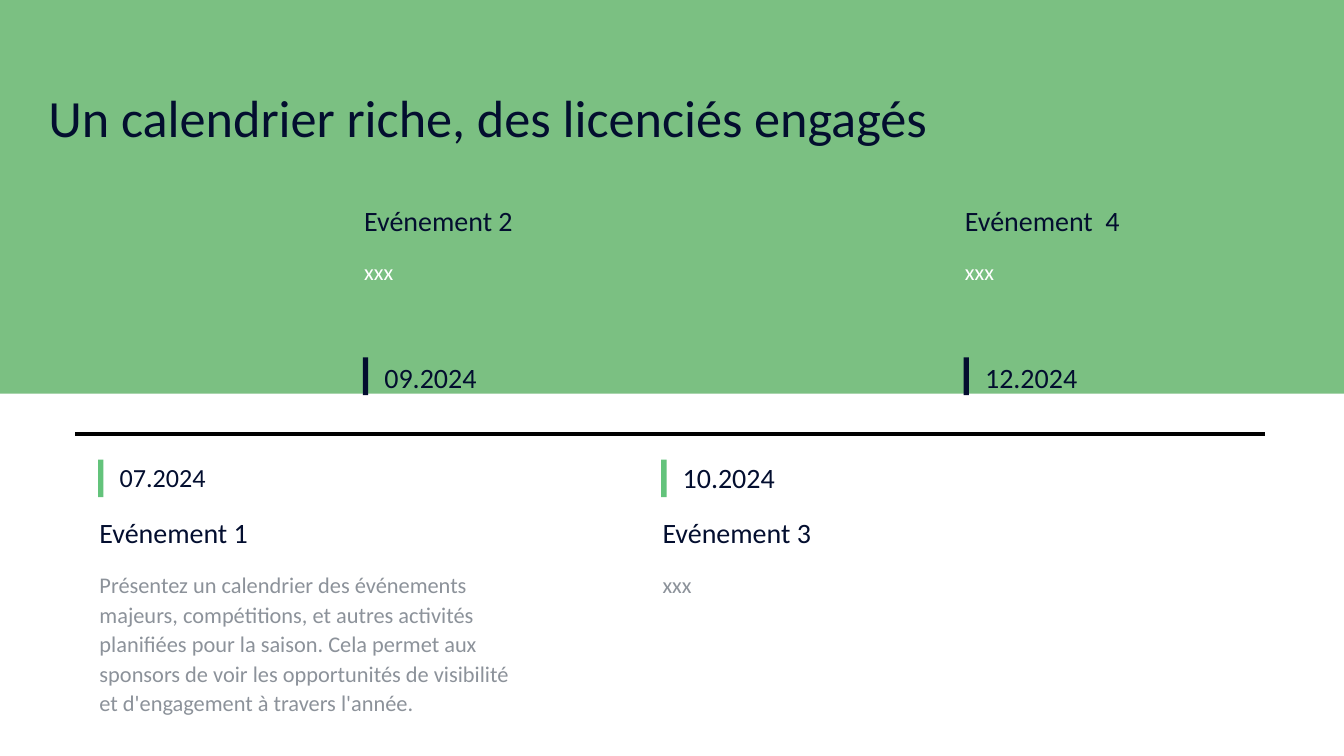
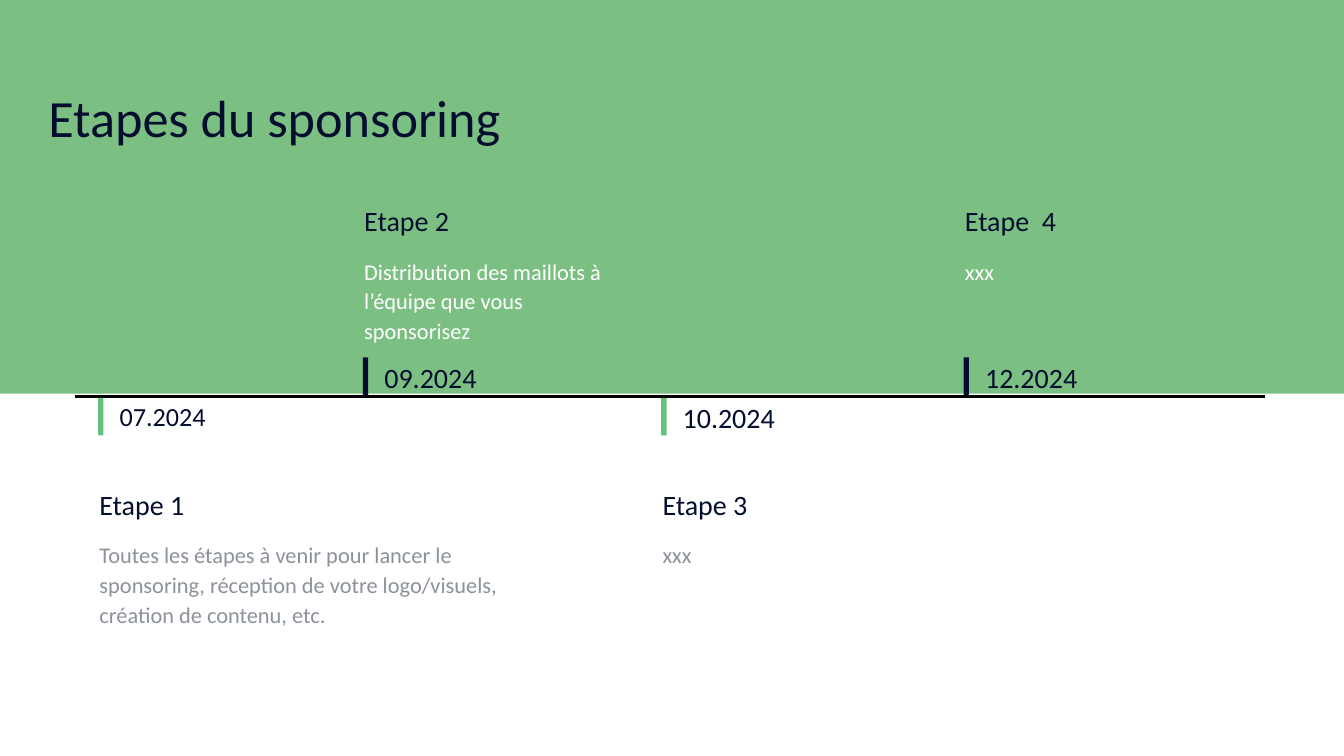
from lxml import etree
from pptx import Presentation
from pptx.dml.color import RGBColor
from pptx.enum.shapes import MSO_CONNECTOR as Connector, MSO_SHAPE as Shape
from pptx.enum.text import MSO_ANCHOR as Anchor
from pptx.oxml.ns import qn
from pptx.util import Inches, Pt

# Content: each step is (date, heading, description), in time order;
# "lower" holds the tops of marker, date, heading and description below the line
TIMELINES = [
    {
        "title": "Un calendrier riche, des licenciés engagés",
        "line_y": 3.23,
        "lower": (3.42, 3.41, 3.82, 4.21),
        "steps": [
            ("07.2024", "Evénement 1",
             "Présentez un calendrier des événements majeurs, compétitions, "
             "et autres activités planifiées pour la saison. Cela permet aux "
             "sponsors de voir les opportunités de visibilité et d'engagement "
             "à travers l'année."),
            ("09.2024", "Evénement 2", "xxx"),
            ("10.2024", "Evénement 3", "xxx"),
            ("12.2024", "Evénement  4", "xxx"),
        ],
    },
    {
        "title": "Etapes du sponsoring",
        "line_y": 2.95,
        "lower": (2.96, 2.96, 3.61, 3.99),
        "steps": [
            ("07.2024", "Etape 1",
             "Toutes les étapes à venir pour lancer le sponsoring, réception "
             "de votre logo/visuels, création de contenu, etc."),
            ("09.2024", "Etape 2",
             "Distribution des maillots à l’équipe que vous sponsorisez"),
            ("10.2024", "Etape 3", "xxx"),
            ("12.2024", "Etape  4", "xxx"),
        ],
    },
]

# Shared style
COLORS = {
    "band": "7BC082", "marker": "63C37B", "navy": "030E2F", "bar": "030D2F",
    "grey": "8C929A", "white": "FFFFFF", "line": "000000",
}
FONT = "Calibri"
INSET = 0.02

# Shared layout, in inches; steps alternate below and above the line
WIDTH = 10
HEIGHT = WIDTH * 9 / 16
BAND_HEIGHT = 2.93
LINE_LEFT, LINE_RIGHT = 0.56, 9.41
UPPER = (2.66, 2.66, 1.5, 1.88)
HEADING_WIDTH = 2.04
# Left, description width, date width, date height, date size
COLUMNS = [
    (0.72, 3.11, 1.11, 0.2, 14),
    (2.69, 2.04, 1.19, 0.25, 15),
    (4.91, 2.04, 1.23, 0.22, 15),
    (7.16, 2.04, 1.19, 0.2, 15),
]


def color(name):
    return RGBColor.from_string(COLORS[name])


def add_bar(page, left, top, width, height, fill):
    bar = page.shapes.add_shape(
        Shape.RECTANGLE, *map(Inches, (left, top, width, height)))
    bar.shadow.inherit = False
    bar.fill.solid()
    bar.fill.fore_color.rgb = color(fill)
    bar.line.fill.background()


def add_text(page, text, left, top, width, height, size, ink,
             anchor=Anchor.TOP, spacing=None):
    box = page.shapes.add_textbox(*map(Inches, (left, top, width, height)))
    frame = box.text_frame
    frame.word_wrap = True
    frame.vertical_anchor = anchor
    frame.margin_left = frame.margin_right = Inches(INSET)
    frame.margin_top = frame.margin_bottom = Inches(INSET)
    frame.text = text
    para = frame.paragraphs[0]
    para.line_spacing = spacing
    font = para.runs[0].font
    font.name, font.size = FONT, Pt(size)
    font.color.rgb = color(ink)


def add_axis(page, y):
    axis = page.shapes.add_connector(
        Connector.STRAIGHT, *map(Inches, (LINE_LEFT, y, LINE_RIGHT, y)))
    axis.line.color.rgb = color("line")
    axis.line.width = Pt(2)
    etree.SubElement(axis._element.spPr, qn("a:effectLst"))


def add_step(page, column, step, tops, ink, bar_fill):
    date, heading, description = step
    left, text_width, date_width, date_height, date_size = column
    marker_y, date_y, heading_y, text_y = tops
    add_text(page, description, left, text_y, text_width, 0.82, 12, ink,
             spacing=1.1)
    add_text(page, heading, left, heading_y, HEADING_WIDTH, 0.28, 15, "navy",
             Anchor.MIDDLE)
    add_bar(page, left + 0.01, marker_y, 0.04, 0.28, bar_fill)
    add_text(page, date, left + 0.15, date_y, date_width, date_height,
             date_size, "navy")


def add_timeline(deck, timeline):
    page = deck.slides.add_slide(deck.slide_layouts[6])
    add_bar(page, 0, 0, WIDTH, BAND_HEIGHT, "band")
    add_axis(page, timeline["line_y"])
    sides = [(timeline["lower"], "grey", "marker"), (UPPER, "white", "bar")]
    for index, (column, step) in enumerate(zip(COLUMNS, timeline["steps"])):
        add_step(page, column, step, *sides[index % 2])
    add_text(page, timeline["title"], 0.34, 0.49, 6.76, 0.63, 28, "navy",
             Anchor.BOTTOM)


def main():
    deck = Presentation()
    deck.slide_width, deck.slide_height = Inches(WIDTH), Inches(HEIGHT)
    for timeline in TIMELINES:
        add_timeline(deck, timeline)
    deck.save("out.pptx")


if __name__ == "__main__":
    main()
